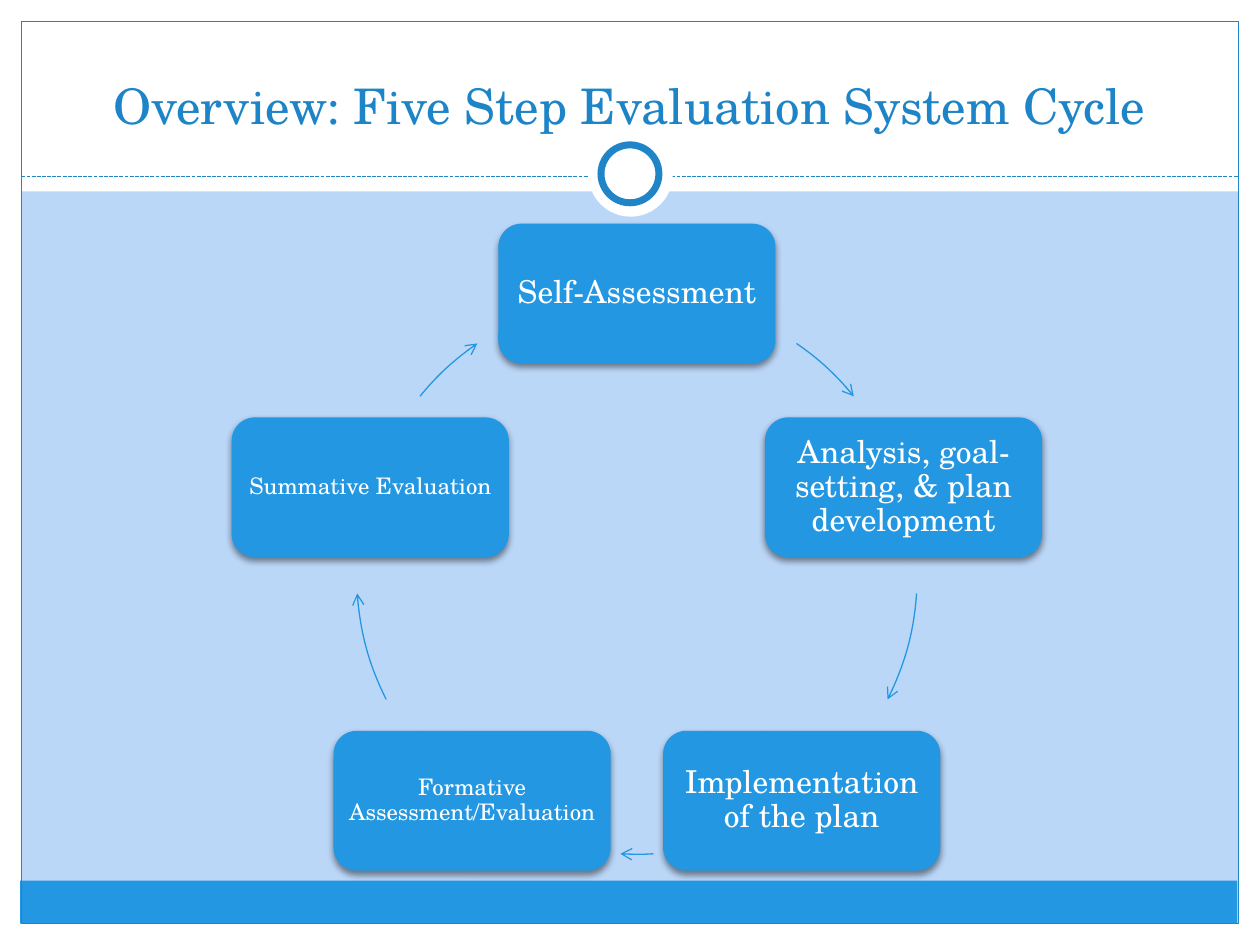
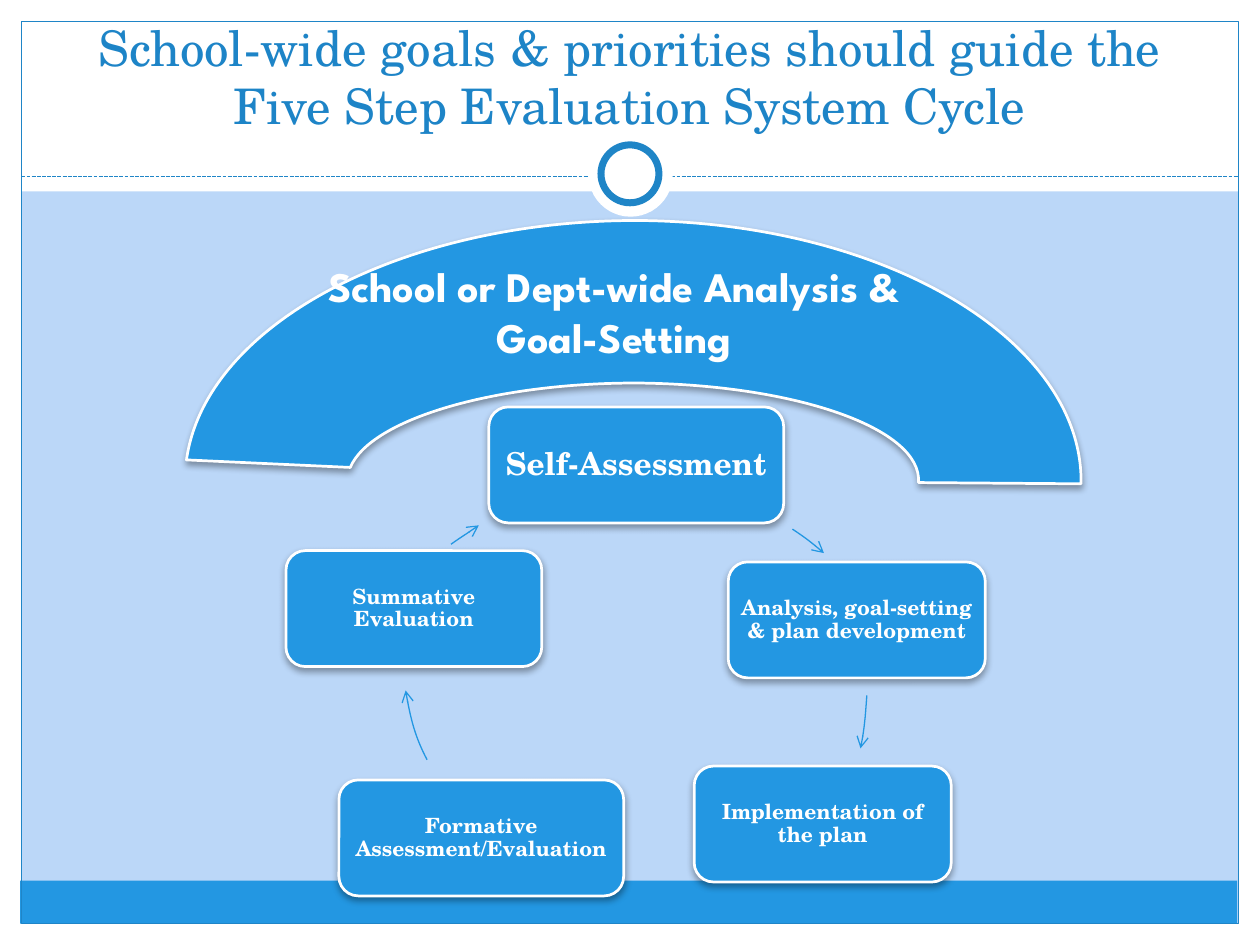
"""Build two slides on a five step evaluation cycle."""
import math

from lxml import etree
from pptx import Presentation
from pptx import util as u
from pptx.dml.color import RGBColor
from pptx.enum import dml, shapes, text
from pptx.oxml import ns

WHITE = RGBColor(0xFF, 0xFF, 0xFF)
SKY = RGBColor(0xBB, 0xD7, 0xF8)
BLUE = RGBColor(0x23, 0x97, 0xE2)
EDGE = RGBColor(0x1F, 0x85, 0xC7)
TITLE = RGBColor(0x1D, 0x84, 0xC7)
SERIF = "TeX Gyre Schola"
SANS = "League Spartan"
SHAPE = shapes.MSO_SHAPE

WIDTH, HEIGHT, MARGIN = 10, 7.5, 0.17
TITLE_BOX = (0.33, 0.29, 9.33, 0.83)

CYCLE_BOX = (2.83, 2.33, 4.45, 4.45)
STEP_SIZE = (2.2, 1.11)
CYCLE_STEPS = [
    ("Self-Assessment", 18),
    ("Analysis, goal-setting, & plan development", 18),
    ("Implementation of the plan", 18),
    ("Formative Assessment/Evaluation", 13),
    ("Summative Evaluation", 13),
]
ARROW_ANGLES = [(34.7, 50.7), (94, 116.6), (176.6, 183.4), (243.4, 266), (309.3, 325.3)]

GUIDED_STEPS = [
    ("Self-Assessment", 18, (3.88, 3.23, 2.34, 0.92)),
    ("Analysis, goal-setting & plan development", 12, (5.78, 4.46, 2.04, 0.92)),
    ("Implementation of the plan", 12, (5.51, 6.08, 2.04, 0.92)),
    ("Formative Assessment/Evaluation", 12, (2.69, 6.19, 2.26, 0.92)),
    ("Summative Evaluation", 12, (2.27, 4.37, 2.03, 0.92)),
]
GUIDED_RING = 3.67
GUIDED_ARROWS = [
    ((3.47, 3.92), [(6.29, 4.2), (6.38, 4.26), (6.46, 4.32), (6.54, 4.39)]),
    ((3.2, 3.68), [(6.88, 5.52), (6.87, 5.66), (6.86, 5.8), (6.83, 5.94)]),
    ((3.38, 3.51), [(5.78, 7.1), (5.52, 7.18), (5.24, 7.21), (4.97, 7.17)]),
    ((3.2, 3.37), [(3.39, 6.03), (3.3, 5.86), (3.25, 5.67), (3.22, 5.48)]),
    ((2.85, 3.95), [(3.58, 4.32), (3.65, 4.27), (3.73, 4.22), (3.8, 4.17)]),
]
ARCH_BOX = (1.47, 1.75, 7.11, 4.12)
ARCH_OUTLINE = [
    ("moveTo", [(1.48, 3.65)]),
    ("cubicBezTo", [(1.63, 2.57), (3.21, 1.74), (5.08, 1.75)]),
    ("cubicBezTo", [(7.04, 1.77), (8.6, 2.71), (8.58, 3.84)]),
    ("lnTo", [(7.29, 3.83)]),
    ("cubicBezTo", [(7.32, 3.4), (6.31, 3.05), (5.05, 3.04)]),
    ("cubicBezTo", [(3.91, 3.04), (2.94, 3.33), (2.78, 3.71)]),
    ("lnTo", [(1.48, 3.65)]),
    ("close", []),
]
ARCH_TEXT_BOX = (2.49, 2.02, 4.76, 0.91)


def inches(values):
    """Turn numbers into lengths."""
    return [u.Inches(value) for value in values]


def set_values(target, values):
    """Set each named attribute of the target."""
    for name, value in values.items():
        setattr(target, name, value)


def paint(shape, fill=None, line=None, weight=0.75):
    """Give a shape a plain fill and line, without a shadow."""
    shape.shadow.inherit = False
    if fill is None:
        shape.fill.background()
    else:
        shape.fill.solid()
        shape.fill.fore_color.rgb = fill
    if line is None:
        shape.line.fill.background()
    else:
        shape.line.color.rgb = line
        shape.line.width = u.Pt(weight)


def cast_shadow(shape, opacity):
    """Add a soft black shadow below a shape."""
    effects = shape.element.spPr.find(ns.qn("a:effectLst"))
    shadow = etree.SubElement(
        effects, ns.qn("a:outerShdw"), blurRad=str(u.Pt(4)), dist=str(u.Pt(2)),
        dir="5400000", algn="ctr", rotWithShape="0")
    colour = etree.SubElement(shadow, ns.qn("a:srgbClr"), val="000000")
    etree.SubElement(colour, ns.qn("a:alpha"), val=str(opacity * 1000))


def write(shape, words, frame_values, font_values, colour, spacing=1.0):
    """Write one centred paragraph into a shape."""
    frame = shape.text_frame
    frame.text = words
    set_values(frame, {"word_wrap": True, "auto_size": text.MSO_AUTO_SIZE.NONE, **frame_values})
    para = frame.paragraphs[0]
    set_values(para, {"alignment": text.PP_ALIGN.CENTER, "line_spacing": spacing})
    for span in para.runs:
        set_values(span.font, font_values)
        span.font.color.rgb = colour


def draw_outline(page, box, commands):
    """Draw a freeform that fills the box and follows the commands."""
    left, top, width, height = inches(box)
    builder = page.shapes.build_freeform(left, top)
    builder.add_line_segments([(left + width, top + height)], close=False)
    shape = builder.convert_to_shape()
    outline = next(shape.element.spPr.iter(ns.qn("a:path")))
    for child in list(outline):
        outline.remove(child)
    for name, points in commands:
        command = etree.SubElement(outline, ns.qn(f"a:{name}"))
        for x, y in points:
            etree.SubElement(command, ns.qn("a:pt"),
                             x=str(u.Inches(x) - left), y=str(u.Inches(y) - top))
    return shape


def draw_arrow(page, box, curve):
    """Draw a thin curved arrow that ends at the last point of the curve."""
    arrow = draw_outline(page, box, [("moveTo", curve[:1]), ("cubicBezTo", curve[1:])])
    paint(arrow, line=BLUE)
    line = arrow.element.spPr.find(ns.qn("a:ln"))
    etree.SubElement(line, ns.qn("a:tailEnd"), type="arrow")


def on_circle(box, degrees):
    """Return the point at a clockwise angle from the top of the circle in a box."""
    left, top, width, height = box
    angle = math.radians(degrees)
    return (left + width / 2 * (1 + math.sin(angle)),
            top + height / 2 * (1 - math.cos(angle)))


def arc(box, start, end):
    """Return the cubic curve that follows the circle between two angles."""
    radius = box[2] / 2
    reach = radius * 4 / 3 * math.tan(math.radians(end - start) / 4)
    (x1, y1), (x2, y2) = on_circle(box, start), on_circle(box, end)
    first, last = math.radians(start), math.radians(end)
    return [(x1, y1),
            (x1 + reach * math.cos(first), y1 + reach * math.sin(first)),
            (x2 - reach * math.cos(last), y2 - reach * math.sin(last)),
            (x2, y2)]


def draw_step(page, box, words, size, outlined=False):
    """Draw one rounded step of the cycle."""
    step = page.shapes.add_shape(SHAPE.ROUNDED_RECTANGLE, *inches(box))
    paint(step, BLUE, WHITE if outlined else None, 1.57)
    cast_shadow(step, 35 if outlined else 45)
    inset = u.Inches(0.07 if size > 13 else 0.05)
    sides = ("left", "top", "right", "bottom")
    frame_values = {f"margin_{side}": inset for side in sides}
    frame_values["vertical_anchor"] = text.MSO_ANCHOR.MIDDLE
    font_values = {"name": SERIF, "size": u.Pt(size), "bold": outlined}
    write(step, words, frame_values, font_values, WHITE, 0.9)


def draw_frame(page):
    """Draw the bands, border, dashed rule and ring."""
    inner_width, inner_height = WIDTH - 2 * MARGIN, HEIGHT - 2 * MARGIN
    parts = [
        (SHAPE.RECTANGLE, (0, HEIGHT - MARGIN, WIDTH, MARGIN), WHITE, None, 0),
        (SHAPE.RECTANGLE, (0, 0, WIDTH, 1.52), WHITE, None, 0),
        (SHAPE.RECTANGLE, (0, 0, MARGIN, HEIGHT), WHITE, None, 0),
        (SHAPE.RECTANGLE, (WIDTH - MARGIN, 0, MARGIN, HEIGHT), WHITE, None, 0),
        (SHAPE.RECTANGLE, (0.16, 6.99, inner_width, 0.34), BLUE, None, 0),
        (SHAPE.RECTANGLE, (MARGIN, MARGIN, inner_width, inner_height), None, EDGE, 0.75),
        (SHAPE.OVAL, (4.67, 1.05, 0.67, 0.67), WHITE, None, 0),
        (SHAPE.OVAL, (4.77, 1.15, 0.46, 0.46), WHITE, EDGE, 4),
    ]
    drawn = []
    for kind, box, fill, line, weight in parts:
        part = page.shapes.add_shape(kind, *inches(box))
        paint(part, fill, line, weight)
        drawn.append(part)
    rule = page.shapes.add_connector(
        shapes.MSO_CONNECTOR.STRAIGHT, *inches((MARGIN, 1.4, WIDTH - MARGIN, 1.4)))
    rule.line.color.rgb = EDGE
    set_values(rule.line, {"width": u.Pt(0.75), "dash_style": dml.MSO_LINE.SQUARE_DOT})
    etree.SubElement(rule.element.spPr, ns.qn("a:effectLst"))
    drawn.insert(6, rule)
    return drawn


def prepare_layout(layout):
    """Set the background and title place that all slides share."""
    layout.background.fill.solid()
    layout.background.fill.fore_color.rgb = SKY
    for holder in list(layout.placeholders):
        if holder.placeholder_format.type == shapes.PP_PLACEHOLDER.TITLE:
            set_values(holder, dict(zip(("left", "top", "width", "height"), inches(TITLE_BOX))))
        else:
            holder.element.getparent().remove(holder.element)


def move_to_layout(parts, layout):
    """Put drawn parts behind the placeholders of the layout."""
    for index, part in enumerate(parts):
        layout.shapes.element.insert(2 + index, part.element)


def add_page(deck, layout, title):
    """Add a slide with its title."""
    page = deck.slides.add_slide(layout)
    write(page.shapes.title, title, {"vertical_anchor": text.MSO_ANCHOR.BOTTOM},
          {"name": SERIF, "size": u.Pt(28)}, TITLE)
    return page


def draw_cycle(page, box):
    """Set the five steps evenly round the circle in a box, with arrows between."""
    width, height = STEP_SIZE
    turn = 360 / len(CYCLE_STEPS)
    for index, (words, size) in enumerate(CYCLE_STEPS):
        x, y = on_circle(box, index * turn)
        draw_step(page, (x - width / 2, y - height / 2, width, height), words, size)
        draw_arrow(page, box, arc(box, *ARROW_ANGLES[index]))


def draw_arch(page, box):
    """Draw the arch of shared goals over the cycle."""
    arch = draw_outline(page, box, ARCH_OUTLINE)
    paint(arch, BLUE, WHITE, 1.57)
    cast_shadow(arch, 35)


def draw_arch_label(page, box):
    """Write the heading of the arch."""
    label = page.shapes.add_textbox(*inches(box))
    write(label, "School or Dept-wide Analysis & Goal-Setting", {},
          {"name": SANS, "size": u.Pt(24), "bold": True}, WHITE)


def draw_guided_cycle(page):
    """Draw the outlined steps under the arch, with arrows between."""
    for (words, size, box), (corner, curve) in zip(GUIDED_STEPS, GUIDED_ARROWS):
        draw_step(page, box, words, size, outlined=True)
        draw_arrow(page, (*corner, GUIDED_RING, GUIDED_RING), curve)


def main():
    """Build and save the deck."""
    deck = Presentation()
    set_values(deck, {"slide_width": u.Inches(WIDTH), "slide_height": u.Inches(HEIGHT)})
    layout = deck.slide_layouts[5]
    prepare_layout(layout)

    overview = add_page(deck, layout, "Overview: Five Step Evaluation System Cycle")
    move_to_layout(draw_frame(overview), layout)
    draw_cycle(overview, CYCLE_BOX)

    guided = add_page(deck, layout, "School-wide goals & priorities should guide the\v"
                                    "Five Step Evaluation System Cycle")
    draw_arch(guided, ARCH_BOX)
    draw_guided_cycle(guided)
    draw_arch_label(guided, ARCH_TEXT_BOX)
    deck.save("out.pptx")


if __name__ == "__main__":
    main()
